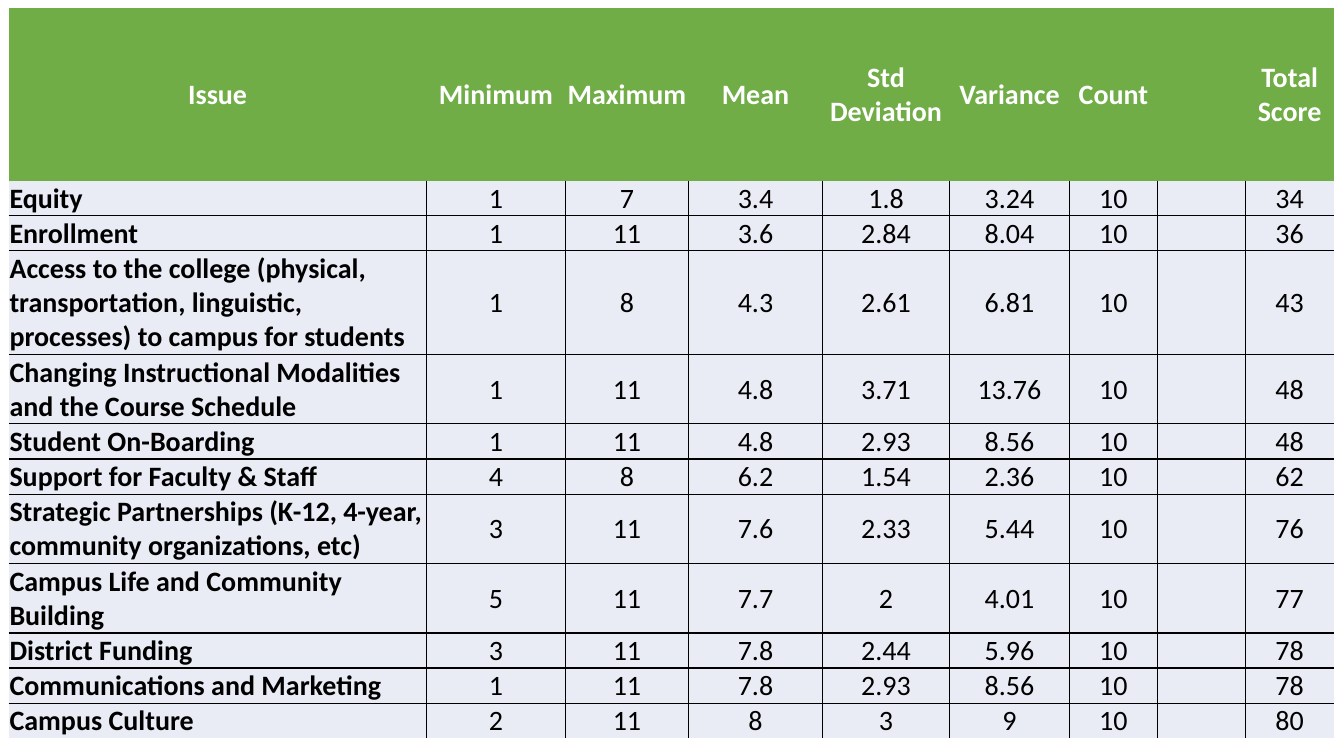
from pptx import Presentation
from pptx.dml.color import RGBColor
from pptx.enum import text
from pptx.oxml import parse_xml
from pptx.oxml.ns import nsdecls
from pptx.util import Cm, Pt

GREEN = RGBColor(0x70, 0xAD, 0x47)
PALE = RGBColor(0xE9, 0xEB, 0xF5)
WHITE = RGBColor(0xFF, 0xFF, 0xFF)
BLACK = RGBColor(0, 0, 0)

HEADS = ["Issue", "Minimum", "Maximum", "Mean", "Std Deviation",
         "Variance", "Count", "", "Total Score"]
WIDTHS = [10.53, 3.5, 3.1, 3.38, 3.2, 3.02, 2.22, 2.22, 2.22]

# Lines of text, issue, min, max, mean, deviation, variance, count, gap, total
ISSUES = [
    (1, "Equity", 1, 7, 3.4, 1.8, 3.24, 10, "", 34),
    (1, "Enrollment", 1, 11, 3.6, 2.84, 8.04, 10, "", 36),
    (3, "Access to the college (physical, transportation, linguistic, "
        "processes) to campus for students",
     1, 8, 4.3, 2.61, 6.81, 10, "", 43),
    (2, "Changing Instructional Modalities and the Course Schedule",
     1, 11, 4.8, 3.71, 13.76, 10, "", 48),
    (1, "Student On-Boarding", 1, 11, 4.8, 2.93, 8.56, 10, "", 48),
    (1, "Support for Faculty & Staff", 4, 8, 6.2, 1.54, 2.36, 10, "", 62),
    (2, "Strategic Partnerships (K-12, 4-year, community organizations, etc)",
     3, 11, 7.6, 2.33, 5.44, 10, "", 76),
    (2, "Campus Life and Community Building",
     5, 11, 7.7, 2, 4.01, 10, "", 77),
    (1, "District Funding", 3, 11, 7.8, 2.44, 5.96, 10, "", 78),
    (1, "Communications and Marketing", 1, 11, 7.8, 2.93, 8.56, 10, "", 78),
    (1, "Campus Culture", 2, 11, 8, 3, 9, 10, "", 80),
]


def edge(cell, side, shown):
    """Draw one side of a cell in black, or clear it."""
    fill = (f'<a:solidFill><a:srgbClr val="{BLACK}"/></a:solidFill>'
            if shown else "<a:noFill/>")
    cell._tc.get_or_add_tcPr().append(parse_xml(
        f'<a:ln{side} {nsdecls("a")} w="{Pt(1)}">{fill}</a:ln{side}>'))


# Slide
prs = Presentation()
prs.slide_width, prs.slide_height = Cm(33.87), Cm(19.05)
slide = prs.slides.add_slide(prs.slide_layouts[6])

# Table grid
rows = [HEADS] + [issue[1:] for issue in ISSUES]
highs = [4.35] + [0.02 + 0.86 * issue[0] for issue in ISSUES]
table = slide.shapes.add_table(len(rows), len(HEADS), Cm(0.22), Cm(0.2),
                               Cm(sum(WIDTHS)), Cm(sum(highs))).table
table.first_row = table.horz_banding = False
for col, width in zip(table.columns, WIDTHS):
    col.width = Cm(width)
for row, high in zip(table.rows, highs):
    row.height = Cm(high)

# Cells
last_row, last_col = len(rows) - 1, len(HEADS) - 1
for r, row in enumerate(rows):
    for c, value in enumerate(row):
        cell = table.cell(r, c)
        head = r == 0

        # Only the inner lines of the body are drawn
        edge(cell, "L", not head and c > 0)
        edge(cell, "R", not head and c < last_col)
        edge(cell, "T", r > 1)
        edge(cell, "B", 0 < r < last_row)
        cell.fill.solid()
        cell.fill.fore_color.rgb = GREEN if head else PALE

        cell.margin_left = cell.margin_right = cell.margin_top = Cm(0.02)
        cell.margin_bottom = 0
        cell.vertical_anchor = text.MSO_ANCHOR.MIDDLE
        cell.text_frame.text = str(value)
        para = cell.text_frame.paragraphs[0]
        para.alignment = (text.PP_ALIGN.CENTER if head or c > 0
                          else text.PP_ALIGN.LEFT)
        for run in para.runs:
            run.font.name = "Calibri"
            run.font.size = Pt(20)
            run.font.bold = head or c == 0
            run.font.color.rgb = WHITE if head else BLACK

prs.save("out.pptx")
